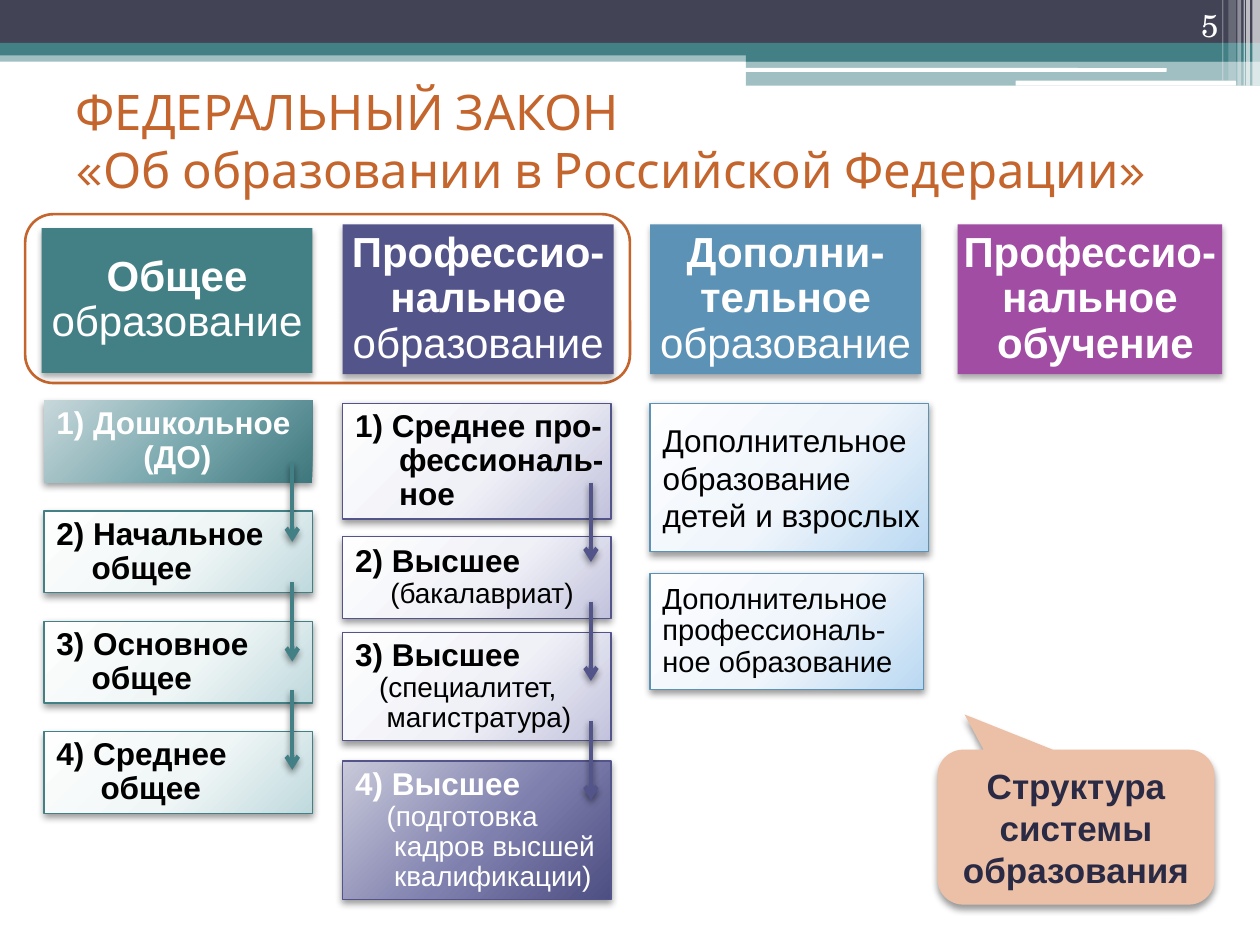
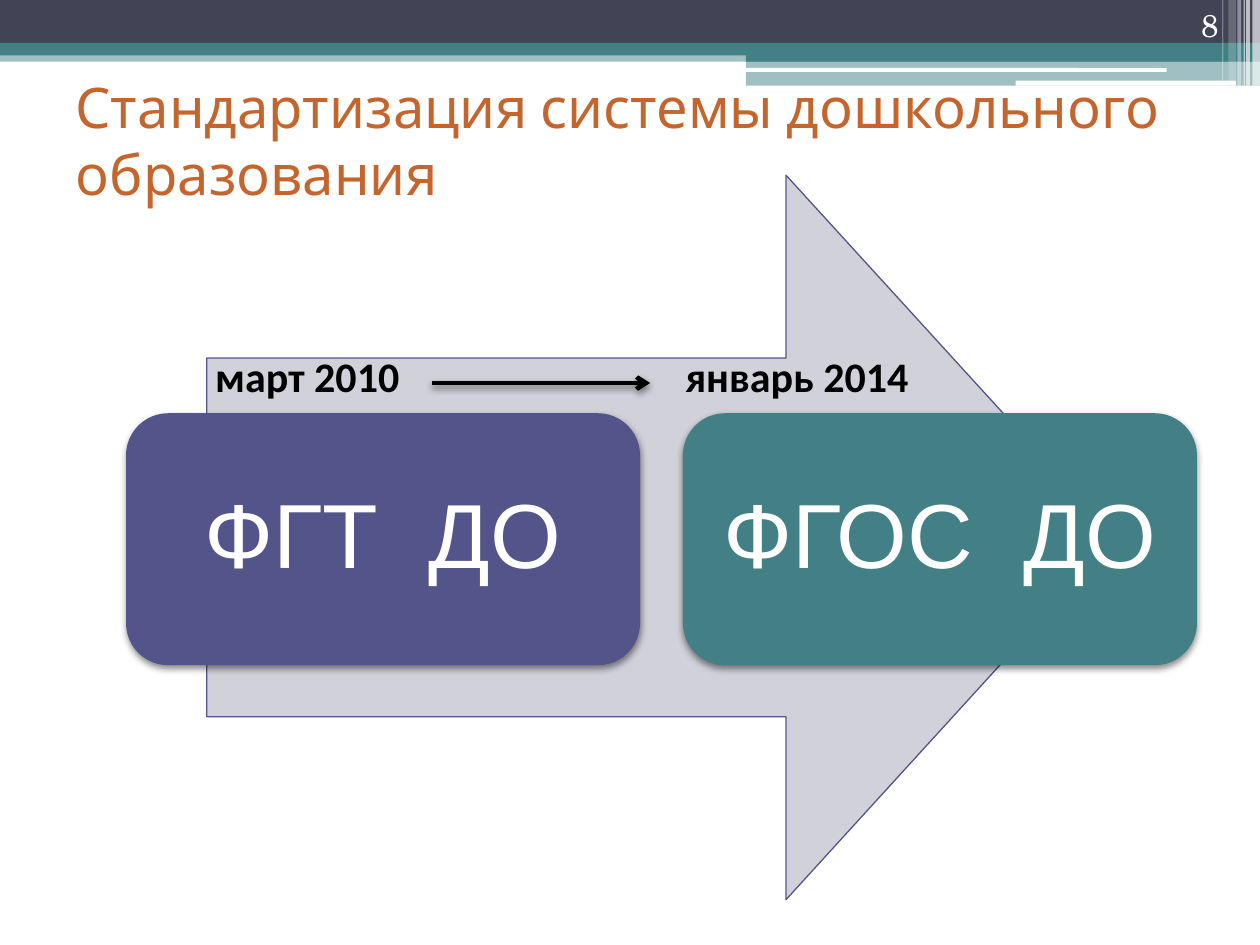
from dataclasses import dataclass

from lxml import etree
from pptx import Presentation
from pptx import util as u
from pptx.dml import color as dml
from pptx.enum import shapes, text
from pptx.oxml import ns, parse_xml

KIND = shapes.MSO_SHAPE
LEFT, MID, RIGHT = text.PP_ALIGN.LEFT, text.PP_ALIGN.CENTER, text.PP_ALIGN.RIGHT
TOP, CORE, BASE = text.MSO_ANCHOR.TOP, text.MSO_ANCHOR.MIDDLE, text.MSO_ANCHOR.BOTTOM
COLS, ROWS = 10, 7.5
CELL = u.Inches(1)


@dataclass(frozen=True)
class Theme:
    dark: str = "424456"
    teal: str = "438086"
    plum: str = "53548A"
    blue: str = "5C92B5"
    pink: str = "A04DA3"
    rust: str = "C4652D"
    peach: str = "EBC0A7"
    navy: str = "2A2A45"
    gray: str = "D1D1DA"
    white: str = "FFFFFF"
    black: str = "000000"
    mint: tuple = ("FEFEFE", "F0F6F6", "BFD9DD")
    pine: tuple = ("C7D7DA", "77A7AD", "3E777D")
    lilac: tuple = ("FEFEFE", "F0F1F7", "C2C2DD")
    grape: tuple = ("C9C9DA", "7F80AE", "4D4E81")
    sky: tuple = ("FEFEFF", "EFF5FB", "BAD8F2")
    face: str = "Arial"
    title: str = "Karla"
    serif: str = "TeX Gyre Schola"
    date: str = "Calibri"
    note: float = 16
    small: float = 16.6
    body: float = 18
    call: float = 20
    head: float = 24
    law: float = 28
    top: float = 32
    huge: float = 52


T = Theme()


def cells(*nums):
    return [round(n * CELL) for n in nums]


def rgb(tone):
    return dml.RGBColor.from_string(tone)


def write(shape, lines, align=LEFT, anchor=CORE, pads=(0.1, 0.05, 0.1, 0.05),
          gap=None, **base):
    frame = shape.text_frame
    frame.word_wrap = True
    frame.auto_size = text.MSO_AUTO_SIZE.NONE
    frame.vertical_anchor = anchor
    (frame.margin_left, frame.margin_top,
     frame.margin_right, frame.margin_bottom) = cells(*pads)
    for i, line in enumerate(lines):
        words, extra = line if isinstance(line, tuple) else (line, {})
        form = dict(size=T.body, face=T.face, tone=T.black, bold=False, dent=0)
        form.update(base)
        form.update(extra)
        para = frame.paragraphs[0] if i == 0 else frame.add_paragraph()
        para.text = words
        para.alignment = align
        if gap:
            para.line_spacing = gap
        if form["dent"]:
            para._p.get_or_add_pPr().set("marL", str(cells(form["dent"])[0]))
        for run in para.runs:
            font = run.font
            font.size, font.name = u.Pt(form["size"]), form["face"]
            font.bold, font.color.rgb = form["bold"], rgb(form["tone"])


def shade(props, alpha, blur, dist):
    old = props.find(ns.qn("a:effectLst"))
    if old is not None:
        props.remove(old)
    props.append(parse_xml(
        f'<a:effectLst {ns.nsdecls("a")}><a:outerShdw blurRad="{u.Pt(blur)}" '
        f'dist="{u.Pt(dist)}" dir="5400000" rotWithShape="0"><a:srgbClr val="{T.black}">'
        f'<a:alpha val="{alpha * 1000}"/></a:srgbClr></a:outerShdw></a:effectLst>'))


def blend(shape, tones):
    stops = "".join(f'<a:gs pos="{pos}"><a:srgbClr val="{tone}"/></a:gs>'
                    for pos, tone in zip((0, 55000, 100000), tones))
    shape.fill.background()
    props = shape.element.spPr
    blank = props.find(ns.qn("a:noFill"))
    props.replace(blank, parse_xml(
        f'<a:gradFill {ns.nsdecls("a")} rotWithShape="1"><a:gsLst>{stops}</a:gsLst>'
        '<a:path path="circle"><a:fillToRect l="-40000" t="-90000" r="140000" '
        'b="190000"/></a:path></a:gradFill>'))


def block(slide, area, fill, kind=KIND.RECTANGLE, alpha=100, edge=None, thick=0.75,
          shadow=None, bends=()):
    shape = slide.shapes.add_shape(kind, *cells(*area))
    for i, bend in enumerate(bends):
        shape.adjustments[i] = bend
    if isinstance(fill, tuple):
        blend(shape, fill)
    else:
        shape.fill.solid()
        shape.fill.fore_color.rgb = rgb(fill)
        if alpha < 100:
            tone = shape.element.spPr.find(".//" + ns.qn("a:srgbClr"))
            etree.SubElement(tone, ns.qn("a:alpha")).set("val", str(alpha * 1000))
    if edge:
        shape.line.color.rgb = rgb(edge)
        shape.line.width = u.Pt(thick)
    else:
        shape.line.fill.background()
    shape.shadow.inherit = False
    if shadow:
        shade(shape.element.spPr, *shadow)
    return shape


def label(slide, area, words, **form):
    write(slide.shapes.add_textbox(*cells(*area)), [words], **form)


def arrow(slide, start, end, tone):
    line = slide.shapes.add_connector(shapes.MSO_CONNECTOR.STRAIGHT,
                                      *cells(*start, *end))
    line.line.color.rgb = rgb(tone)
    line.line.width = u.Pt(2.5)
    props = line.element.spPr
    tip = etree.SubElement(props.find(ns.qn("a:ln")), ns.qn("a:tailEnd"))
    tip.set("type", "arrow")
    shade(props, 45, 4, 2)


def head(slide, area, fill, lines):
    box = block(slide, area, fill, shadow=(32, 3.5, 2.2))
    write(box, lines, align=MID, gap=0.9, pads=(0, 0, 0, 0),
          size=T.head, tone=T.white, bold=True)


def card(slide, area, fill, edge, lines, gap=0.9, **form):
    box = block(slide, area, fill, edge=edge, shadow=(40, 4.1, 2))
    write(box, lines, gap=gap, pads=(0.1, 0.05, 0, 0.05), **form)


def band(slide, layout):
    half = COLS * 0.592
    wide = COLS - half
    bars = [block(slide, area, tone, alpha=alpha) for area, tone, alpha in (
        ((0, 0.4, COLS, 0.09), T.teal, 50),
        ((0, 0, COLS, 0.34), T.dark, 100),
        ((0, 0.34, COLS, 0.1), T.teal, 100),
        ((half, 0.39, wide, 0.1), T.teal, 100),
        ((half, 0.48, wide, 0.2), T.teal, 50))]
    bars += [block(slide, area, T.white, KIND.ROUNDED_RECTANGLE)
             for area in ((5.91, 0.54, 3.35, 0.03), (8.06, 0.64, 1.75, 0.04))]
    bars += [block(slide, (left, 0, wide, tall), T.white, alpha=alpha)
             for left, wide, tall, alpha in (
                 (9.94, 0.06, 0.68, 65), (9.89, 0.03, 0.68, 65),
                 (9.87, 0.01, 0.68, 60), (9.82, 0.03, 0.68, 40),
                 (9.75, 0.06, 0.64, 20), (9.7, 0.01, 0.64, 30))]
    tree = layout.placeholders[0].element.getparent()
    for i, bar in enumerate(bars):
        bar.element.find(".//" + ns.qn("p:cNvPr")).set("id", str(100 + i))
        tree.append(bar.element)


def start(deck, layout, title, size, page):
    slide = deck.slides.add_slide(layout)
    write(slide.shapes.title, [title], size=size, face=T.title, tone=T.rust)
    label(slide, (8.94, 0, 0.83, 0.4), page, align=RIGHT, anchor=BASE,
          face=T.serif, tone=T.white)
    return slide


def heads(slide):
    block(slide, (0.2, 1.7, 4.8, 1.34), T.white, KIND.ROUNDED_RECTANGLE,
          edge=T.rust, thick=1.5)
    light = ("образование", dict(bold=False))
    head(slide, (0.33, 1.81, 2.15, 1.15), T.teal, ["Общее", light])
    for i, (wide, fill, lines) in enumerate((
            (2.15, T.plum, ["Профессио-", "нальное", light]),
            (2.15, T.blue, ["Дополни-", "тельное", light]),
            (2.1, T.pink, ["Профессио-", "нальное", ("обучение", dict(dent=0.09))]))):
        head(slide, (2.72 + 2.44 * i, 1.78, wide, 1.19), fill, lines)


def school(slide):
    names = (("1) Дошкольное", "(ДО)", 0.69), ("2) Начальное", "общее", 0.28),
             ("3) Основное", "общее", 0.28), ("4) Среднее", "общее", 0.35))
    for i, (first, last, dent) in enumerate(names):
        fill, edge, tone = ((T.mint, T.teal, T.black) if i
                            else (T.pine, None, T.white))
        card(slide, (0.35, 3.18 + 0.875 * i, 2.13, 0.65), fill, edge,
             [first, (last, dict(dent=dent))], tone=tone, bold=True)
    for top in (3.67, 4.62, 5.48):
        arrow(slide, (2.32, top), (2.32, top + 0.63), T.teal)


def trade(slide):
    def note(words, dent):
        return words, dict(size=T.note, bold=False, dent=dent)

    steps = (
        (3.2, 0.92, ["1) Среднее про-", ("фессиональ-", dict(dent=0.35)),
                     ("ное", dict(dent=0.35))]),
        (4.26, 0.65, ["2) Высшее", note("(бакалавриат)", 0.28)]),
        (5.02, 0.86, ["3) Высшее", note("(специалитет,", 0.19),
                      note("магистратура)", 0.25)]),
        (6.04, 1.1, ["4) Высшее", note("(подготовка", 0.25),
                     note("кадров высшей", 0.31), note("квалификации)", 0.31)]))
    for i, (top, tall, lines) in enumerate(steps):
        fill, tone = (T.grape, T.white) if i == 3 else (T.lilac, T.black)
        card(slide, (2.72, top, 2.13, tall), fill, T.plum, lines, tone=tone, bold=True)
    for i in range(3):
        top = 3.83 + 0.945 * i
        arrow(slide, (4.69, top), (4.69, top + 0.63), T.plum)


def extra(slide):
    card(slide, (5.16, 3.2, 2.21, 1.18), T.sky, T.blue,
         ["Дополнительное", "образование", "детей и взрослых"], gap=None)
    card(slide, (5.16, 4.55, 2.17, 0.92), T.sky, T.blue,
         ["Дополнительное", "профессиональ-", "ное образование"], size=T.small)
    call = block(slide, (7.44, 5.95, 2.2, 1.23), T.peach,
                 KIND.ROUNDED_RECTANGULAR_CALLOUT, shadow=(40, 4, 3),
                 bends=(-0.402, -0.727, 0.167))
    write(call, ["Структура", "системы", "образования"], align=MID,
          size=T.call, tone=T.navy, bold=True)


def stages(slide):
    block(slide, (1.64, 1.39, 7.22, 5.75), T.gray, KIND.RIGHT_ARROW,
          edge=T.plum, bends=(0.495, 0.456))
    for i, (name, date, fill) in enumerate((
            ("ФГТ  ДО", "март 2010", T.plum), ("ФГОС  ДО", "январь 2014", T.teal))):
        box = block(slide, (1 + 4.42 * i, 3.28, 4.08, 2), fill,
                    KIND.ROUNDED_RECTANGLE, shadow=(45, 4, 2), bends=(0.167,))
        write(box, [name], align=MID, gap=0.9, size=T.huge, tone=T.white)
        label(slide, (1.61 + 3.73 * i, 2.73, 2.25, 0.5), date, anchor=TOP,
              size=T.head, face=T.date, bold=True)
    arrow(slide, (3.43, 3.04), (5.16, 3.04), T.black)


def main():
    deck = Presentation()
    deck.slide_width, deck.slide_height = cells(COLS, ROWS)
    layout = deck.slide_layouts[5]
    title = layout.placeholders[0]
    title.left, title.top, title.width, title.height = cells(0.5, 0.52, 9, 1.18)
    law = start(deck, layout,
                "ФЕДЕРАЛЬНЫЙ ЗАКОН\v«Об образовании в Российской Федерации»",
                T.law, "5")
    band(law, layout)
    heads(law)
    extra(law)
    school(law)
    trade(law)
    norm = start(deck, layout, "Стандартизация системы дошкольного образования",
                 T.top, "8")
    stages(norm)
    deck.save("out.pptx")


if __name__ == "__main__":
    main()
